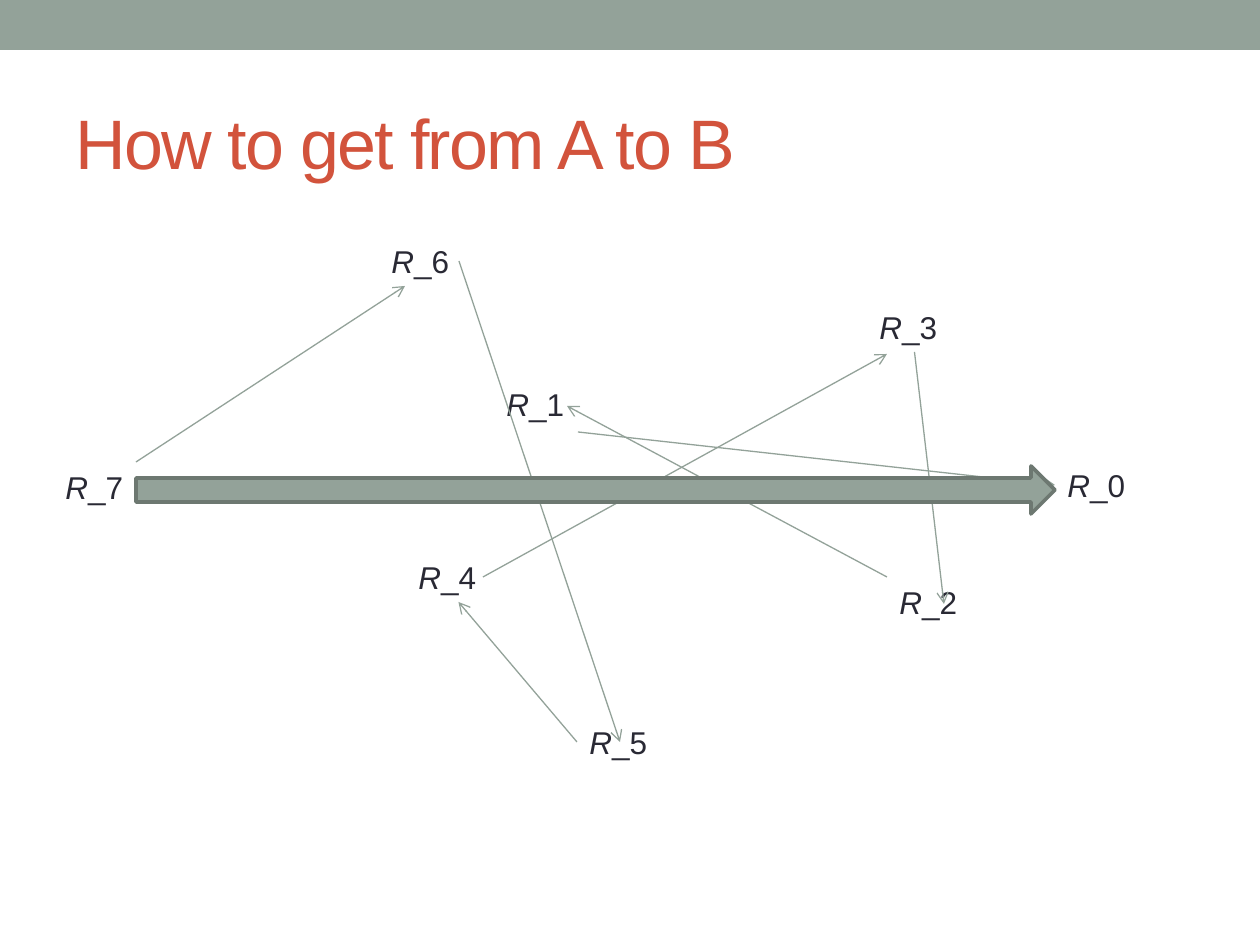
import pptx
import pptx.util
import pptx.dml.color
import pptx.enum.shapes
import pptx.enum.text
import pptx.oxml.ns
import lxml.etree

PX = 914400 / 126
COLORS = {"sage": "93A299", "sage_dark": "6D7871", "title": "D2533C", "text": "292934"}
FONT = "Arial"
BOTTOM, LEFT = 2, 1

# Resistor-style labels: number -> left, top, width, height inside the diagram
LABELS = {
    7: (0, 226, 105, 50), 6: (326, 0, 158, 50), 5: (524, 481, 111, 50),
    4: (353, 316, 105, 50), 3: (814, 66, 95, 50), 2: (834, 341, 116, 50),
    1: (441, 143, 168, 53), 0: (1002, 224, 147, 50),
}
# Steps: start point, end point, (label, side) joined at start, and at end
STEPS = [
    ((83, 226), (352, 50), None, None),
    ((406, 25), (567, 506), None, None),
    ((524, 506), (406, 368), (5, LEFT), (4, BOTTOM)),
    ((430, 341), (834, 118), None, None),
    ((861, 118), (891, 368), (3, BOTTOM), None),
    ((834, 341), (514, 170), None, None),
    ((524, 196), (1002, 250), (1, BOTTOM), (0, LEFT)),
]


def emu(*lengths):
    return [pptx.util.Emu(round(length * PX)) for length in lengths]


def rgb(name):
    return pptx.dml.color.RGBColor.from_string(COLORS[name])


def style_span(span, size, color):
    span.font.name = FONT
    span.font.size = pptx.util.Pt(size)
    span.font.color.rgb = rgb(color)


def add_filled(page, kind, box):
    shape = page.shapes.add_shape(kind, *emu(*box))
    shape.shadow.inherit = False
    shape.fill.solid()
    shape.fill.fore_color.rgb = rgb("sage")
    shape.line.fill.background()
    return shape


def add_title(page, box):
    title = page.shapes.title
    title.left, title.top, title.width, title.height = emu(*box)
    frame = title.text_frame
    frame.text = "How to get from A to B"
    frame.auto_size = pptx.enum.text.MSO_AUTO_SIZE.NONE
    frame.vertical_anchor = pptx.enum.text.MSO_ANCHOR.MIDDLE
    para = frame.paragraphs[0]
    para.alignment = pptx.enum.text.PP_ALIGN.LEFT
    span = para.runs[0]
    style_span(span, 40, "title")
    span.font._element.set("spc", "-100")


def add_label(page, number, box):
    label = page.shapes.add_textbox(*emu(*box))
    frame = label.text_frame
    frame.word_wrap = True
    frame.auto_size = pptx.enum.text.MSO_AUTO_SIZE.SHAPE_TO_FIT_TEXT
    for text, italic in (("R", True), (f"_{number}", False)):
        span = frame.paragraphs[0].add_run()
        span.text = text
        style_span(span, 18, "text")
        span.font.italic = italic
    return label


def add_step(page, start, end):
    step = page.shapes.add_connector(
        pptx.enum.shapes.MSO_CONNECTOR.STRAIGHT, *emu(*start, *end))
    step.line.color.rgb = rgb("sage")
    step.line.width = pptx.util.Pt(0.75)
    qn = pptx.oxml.ns.qn
    lxml.etree.SubElement(step.line._get_or_add_ln(), qn("a:tailEnd"), type="arrow")
    lxml.etree.SubElement(step._element.spPr, qn("a:effectLst"))
    return step


def add_diagram(page, box):
    left, top = box[:2]

    # Labels
    labels = {number: add_label(page, number, (left + x, top + y, width, height))
              for number, (x, y, width, height) in LABELS.items()}

    # Thin step arrows
    for start, end, start_joint, end_joint in STEPS:
        step = add_step(page, (left + start[0], top + start[1]),
                        (left + end[0], top + end[1]))
        if start_joint:
            step.begin_connect(labels[start_joint[0]], start_joint[1])
        if end_joint:
            step.end_connect(labels[end_joint[0]], end_joint[1])

    # Thick direct arrow
    arrow = add_filled(page, pptx.enum.shapes.MSO_SHAPE.RIGHT_ARROW,
                       (left + 83, top + 230, 919, 48))
    arrow.line.color.rgb = rgb("sage_dark")
    arrow.line.width = pptx.util.Pt(2.08)


def main():
    deck = pptx.Presentation()
    deck.slide_width, deck.slide_height = emu(1260, 945)
    page = deck.slides.add_slide(deck.slide_layouts[5])
    add_filled(page, pptx.enum.shapes.MSO_SHAPE.RECTANGLE, (0, 0, 1260, 50))
    add_title(page, (63, 73, 1134, 136))
    add_diagram(page, (53, 236, 1149, 531))
    deck.save("out.pptx")


if __name__ == "__main__":
    main()
